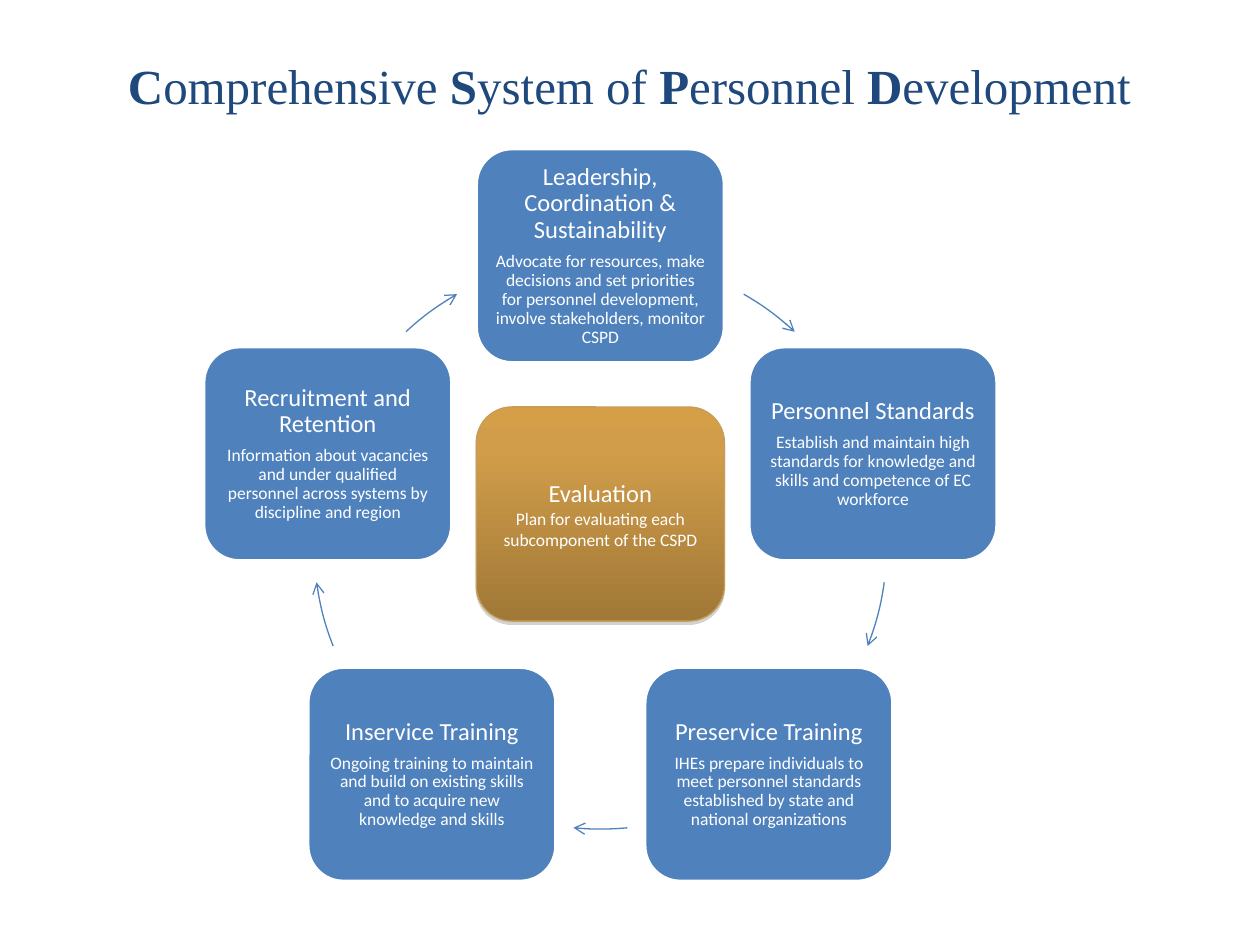
from copy import deepcopy
from math import cos, radians, sin

from lxml import etree
from pptx import Presentation
from pptx.dml.color import RGBColor
from pptx.enum.shapes import MSO_SHAPE
from pptx.enum.text import MSO_ANCHOR, PP_ALIGN
from pptx.oxml.ns import qn
from pptx.util import Inches, Pt

ROUNDED, ARC = MSO_SHAPE.ROUNDED_RECTANGLE, MSO_SHAPE.ARC
CENTER = PP_ALIGN.CENTER
MIDDLE, BOTTOM = MSO_ANCHOR.MIDDLE, MSO_ANCHOR.BOTTOM
COLUMNS, ROWS = 100, 75
WHEEL_X, WHEEL_Y, RADIUS = 47.65, 43.05, 22.75
BOX_WIDTH, BOX_HEIGHT = 19.7, 17

TITLE = [("C", "omprehensive "), ("S", "ystem of "), ("P", "ersonnel "), ("D", "evelopment")]
COMPONENTS = [
    ("Leadership, Coordination & Sustainability",
     "Advocate for resources, make decisions and set priorities for personnel "
     "development, involve stakeholders, monitor CSPD"),
    ("Personnel Standards",
     "Establish and maintain high standards for knowledge and skills and competence "
     "of EC workforce"),
    ("Preservice Training",
     "IHEs prepare individuals to meet personnel standards established by state and "
     "national organizations"),
    ("Inservice Training",
     "Ongoing training to maintain and build on existing skills and to acquire new "
     "knowledge and skills"),
    ("Recruitment and Retention",
     "Information about vacancies and under qualified personnel across systems by "
     "discipline and region"),
]
ARROW_SPANS = [(30, 42.7), (98, 111.2), (174.6, 185.4), (248.8, 262), (317.3, 330)]
GOLD_STOPS = [(0, "D59F48"), (0.2, "D19D4A"), (1, "A07837")]


def color(value):
    """Turn a hex string into a colour."""
    return RGBColor.from_string(value)


class Wheel:
    """Hold the style and the current page, and draw each kind of element."""

    body_font, title_font = "Calibri", "Times New Roman"
    blue, navy, white, bronze, gray = "4F81BD", "1F497D", "FFFFFF", "C69C58", "808080"

    def __init__(self, deck):
        """Start a title-only page in the deck."""
        self.cell_width = deck.slide_width / COLUMNS
        self.cell_height = deck.slide_height / ROWS
        self.page = deck.slides.add_slide(deck.slide_layouts[5])

    def frame(self, column, row, columns, rows):
        """Convert grid cells to slide lengths."""
        return (round(column * self.cell_width), round(row * self.cell_height),
                round(columns * self.cell_width), round(rows * self.cell_height))

    def span(self, para, text, size, font, ink, bold=False):
        """Add one styled run."""
        span = para.add_run()
        span.text = text
        span.font.size, span.font.name, span.font.bold = Pt(size), font, bold
        span.font.color.rgb = color(ink)

    def title(self, words):
        """Set the title with each word's initial in bold."""
        box = self.page.shapes.title
        box.left, box.top, box.width, box.height = self.frame(5.8, 3.9, 88.3, 5.7)
        box.text_frame.vertical_anchor = BOTTOM
        para = box.text_frame.paragraphs[0]
        para.alignment = CENTER
        for initial, rest in words:
            self.span(para, initial, 28, self.title_font, self.navy, True)
            self.span(para, rest, 28, self.title_font, self.navy)

    def box(self, x, y, heading, detail, line, weight, inset, spacing, gap):
        """Draw a rounded box centred on a grid point."""
        box = self.page.shapes.add_shape(ROUNDED, *self.frame(
            x - BOX_WIDTH / 2, y - BOX_HEIGHT / 2, BOX_WIDTH, BOX_HEIGHT))
        box.shadow.inherit = False
        box.fill.solid()
        box.fill.fore_color.rgb = color(self.blue)
        box.line.color.rgb, box.line.width = color(line), Pt(weight)
        frame = box.text_frame
        frame.word_wrap, frame.vertical_anchor = True, MIDDLE
        frame.margin_left = frame.margin_right = Inches(inset)
        frame.margin_top = frame.margin_bottom = Inches(0.06)
        for para, text, size in ((frame.paragraphs[0], heading, 14),
                                 (frame.add_paragraph(), detail, 10)):
            para.alignment, para.line_spacing = CENTER, spacing
            para.space_after = Pt(gap * size)
            self.span(para, text, size, self.body_font, self.white)
        return box

    def component(self, angle, heading, detail):
        """Place a component on the wheel, clockwise from the top."""
        turn = radians(angle)
        self.box(WHEEL_X + RADIUS * sin(turn), WHEEL_Y - RADIUS * cos(turn),
                 heading, detail, self.white, 2, 0.06, 0.9, 0.35)

    def hub(self, heading, detail):
        """Draw the gold centre box with its gradient and shadow."""
        hub = self.box(WHEEL_X, 40.8, heading, detail, self.bronze, 0.75, 0.1, 1.0, 0)
        hub.fill.gradient()
        hub.fill.gradient_angle = 270
        properties = hub._element.spPr
        stops = properties.find(".//" + qn("a:gsLst"))
        stops.append(deepcopy(stops[0]))
        for stop, (position, ink) in zip(hub.fill.gradient_stops, GOLD_STOPS):
            stop.position, stop.color.rgb = position, color(ink)
        shadow = etree.SubElement(properties.find(qn("a:effectLst")), qn("a:outerShdw"),
                                  blurRad="0", dist=str(Pt(1.8)), dir="5400000",
                                  rotWithShape="0")
        shade = etree.SubElement(shadow, qn("a:srgbClr"), val=self.gray)
        etree.SubElement(shade, qn("a:alpha"), val="35000")

    def arrow(self, start, end):
        """Draw a curved arrow between two clockwise angles on the wheel."""
        arrow = self.page.shapes.add_shape(ARC, *self.frame(
            WHEEL_X - RADIUS, WHEEL_Y - RADIUS, 2 * RADIUS, 2 * RADIUS))
        for index, angle in enumerate((start, end)):
            arrow.adjustments[index] = (angle - 90) % 360 * 0.6
        arrow.shadow.inherit = False
        arrow.fill.background()
        arrow.line.color.rgb, arrow.line.width = color(self.blue), Pt(0.75)
        etree.SubElement(arrow._element.spPr.find(qn("a:ln")), qn("a:tailEnd"), type="arrow")


def main():
    """Build and save the slide."""
    deck = Presentation()
    deck.slide_width, deck.slide_height = Inches(10), Inches(7.5)
    wheel = Wheel(deck)
    wheel.title(TITLE)
    for index, (component, span) in enumerate(zip(COMPONENTS, ARROW_SPANS)):
        wheel.component(index * 360 / len(COMPONENTS), *component)
        wheel.arrow(*span)
    wheel.hub("Evaluation", "Plan for evaluating each subcomponent of the CSPD")
    deck.save("out.pptx")


if __name__ == "__main__":
    main()
